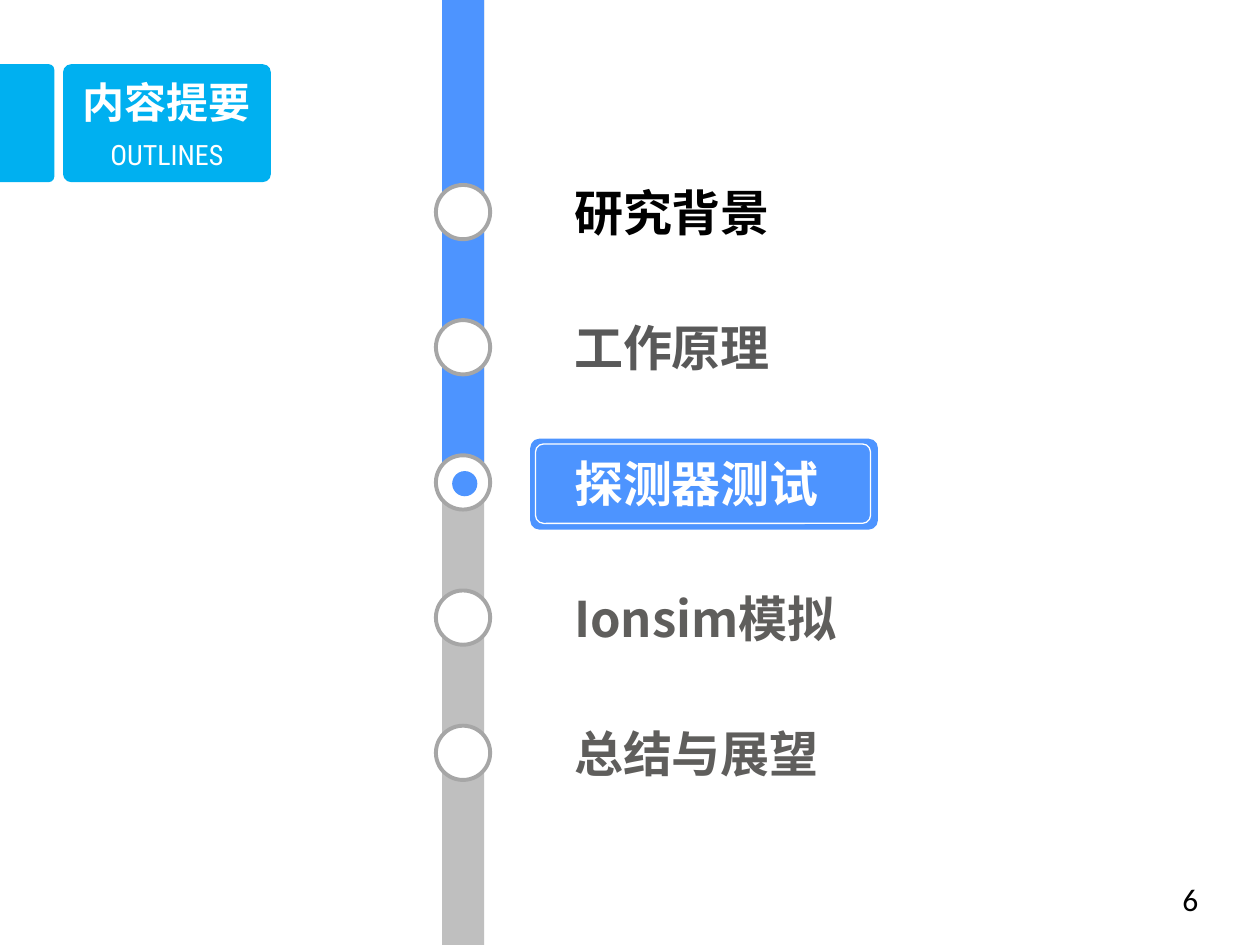
from lxml import etree
from pptx import Presentation
from pptx.dml.color import RGBColor
from pptx.enum.shapes import MSO_SHAPE
from pptx.enum.text import MSO_ANCHOR, MSO_AUTO_SIZE, PP_ALIGN
from pptx.oxml.ns import qn
from pptx.util import Pt

RECTANGLE, ELLIPSE = MSO_SHAPE.RECTANGLE, MSO_SHAPE.OVAL
ROUNDED, ROUNDED_END = MSO_SHAPE.ROUNDED_RECTANGLE, MSO_SHAPE.ROUND_2_SAME_RECTANGLE
MIDDLE, FIXED_SIZE = MSO_ANCHOR.MIDDLE, MSO_AUTO_SIZE.NONE
LEFT, CENTER, RIGHT = PP_ALIGN.LEFT, PP_ALIGN.CENTER, PP_ALIGN.RIGHT

WHITE, BLACK, CYAN, BLUE = "FFFFFF", "000000", "00B0F0", "4D94FF"
RAIL_GREY, RING_GREY = "BFBFBF", "A6A6A6"
CJK_SC, CJK_JP = "Noto Sans CJK SC", "Noto Sans CJK JP"

CHAPTERS = [  # wording, font, colour
    ("研究背景", CJK_JP, BLACK),
    ("工作原理", CJK_JP, "595959"),
    ("探测器测试", CJK_SC, WHITE),
    ("Ionsim模拟", CJK_SC, "5F5E5C"),
    ("总结与展望", CJK_SC, "5F5E5C"),
]
CURRENT = 2


def color(value):
    return RGBColor.from_string(value)


def add_figure(page, kind, box, fill=None, line=None, width=0.75, corner=None):
    figure = page.shapes.add_shape(kind, *map(Pt, box))
    figure.shadow.inherit = False
    if fill:
        figure.fill.solid()
        figure.fill.fore_color.rgb = color(fill)
    else:
        figure.fill.background()
    if line:
        figure.line.color.rgb = color(line)
        figure.line.width = Pt(width)
    else:
        figure.line.fill.background()
    if corner is not None:
        figure.adjustments[0] = corner
    return figure


def add_disc(page, x, y, size, fill, line=None, width=0.75):
    box = (x - size / 2, y - size / 2, size, size)
    add_figure(page, ELLIPSE, box, fill, line, width)


def write(frame, text, size, font, ink, bold=False, align=LEFT, asian=CJK_SC):
    frame.word_wrap = True
    frame.auto_size = FIXED_SIZE
    frame.vertical_anchor = MIDDLE
    frame.text = text
    para = frame.paragraphs[0]
    para.alignment = align
    span = para.runs[0]
    span.font.size, span.font.name, span.font.bold = Pt(size), font, bold
    span.font.color.rgb = color(ink)
    etree.SubElement(span.font._element, qn("a:ea"), typeface=asian)


def add_label(page, box, *args, **options):
    label = page.shapes.add_textbox(*map(Pt, box))
    write(label.text_frame, *args, **options)


def build_heading(page, box):
    left, top, width, height = box
    # Tab at the slide edge, a rounded-end bar turned to the right
    tab_width = 31
    tab = add_figure(page, ROUNDED_END,
                     (left + (tab_width - height) / 2, top + (height - tab_width) / 2,
                      height, tab_width), CYAN, corner=0.1)
    tab.rotation = 90
    # Tile with title and subtitle
    tile_left, tile_width = left + 36, width - 36
    add_figure(page, ROUNDED, (tile_left, top, tile_width, height), CYAN, corner=0.069)
    add_label(page, (tile_left, top + 38, tile_width, 26.6), "OUTLINES", 16,
              "Roboto Condensed", WHITE, align=CENTER)
    title = page.shapes.title
    title.left, title.top, title.width, title.height = map(
        Pt, (tile_left, top + 3.5, tile_width, 36))
    write(title.text_frame, "内容提要", 24, "Calibri", WHITE, True, CENTER)
    page.shapes.element.append(title.element)  # bring in front of the tile


def build_timeline(page, box):
    left, top, width, height = box
    rail_left, rail_width = left + 3.6, 24
    middle = rail_left + rail_width / 2
    first, step = top + 121.2, 77.25
    current_y = first + CURRENT * step
    # Highlight behind the current chapter
    add_figure(page, ROUNDED, (left + 54, current_y - 25, width - 56.3, 52),
               BLUE, corner=0.103)
    add_figure(page, ROUNDED, (left + 57, current_y - 22, width - 63.5, 45.4),
               line=WHITE, corner=0.103)
    # Rail, blue down to the current chapter
    add_figure(page, RECTANGLE, (rail_left, top, rail_width, height), RAIL_GREY)
    add_figure(page, RECTANGLE, (rail_left, top, rail_width, current_y - top - 11.5), BLUE)
    # Stops and chapter names
    for index, (text, font, ink) in enumerate(CHAPTERS):
        y = first + index * step
        add_disc(page, middle, y, 31, WHITE, RING_GREY, 2.25)
        add_label(page, (left + 72, y - 20.5, 187, 41), text, 28, font, ink,
                  bold=True, asian=font)
    add_disc(page, middle + 1, current_y + 0.7, 14.4, BLUE)


def build_page_number(page, box):
    add_label(page, box, "6", 18, "Calibri", BLACK, align=RIGHT)


def main():
    deck = Presentation()
    deck.slide_width, deck.slide_height = Pt(720), Pt(540)
    page = deck.slides.add_slide(deck.slide_layouts[5])
    build_heading(page, (0, 36.7, 154.8, 67.4))
    build_timeline(page, (249, 0, 255, 540))
    build_page_number(page, (629.3, 500.4, 62.6, 26.6))
    deck.save("out.pptx")


if __name__ == "__main__":
    main()
